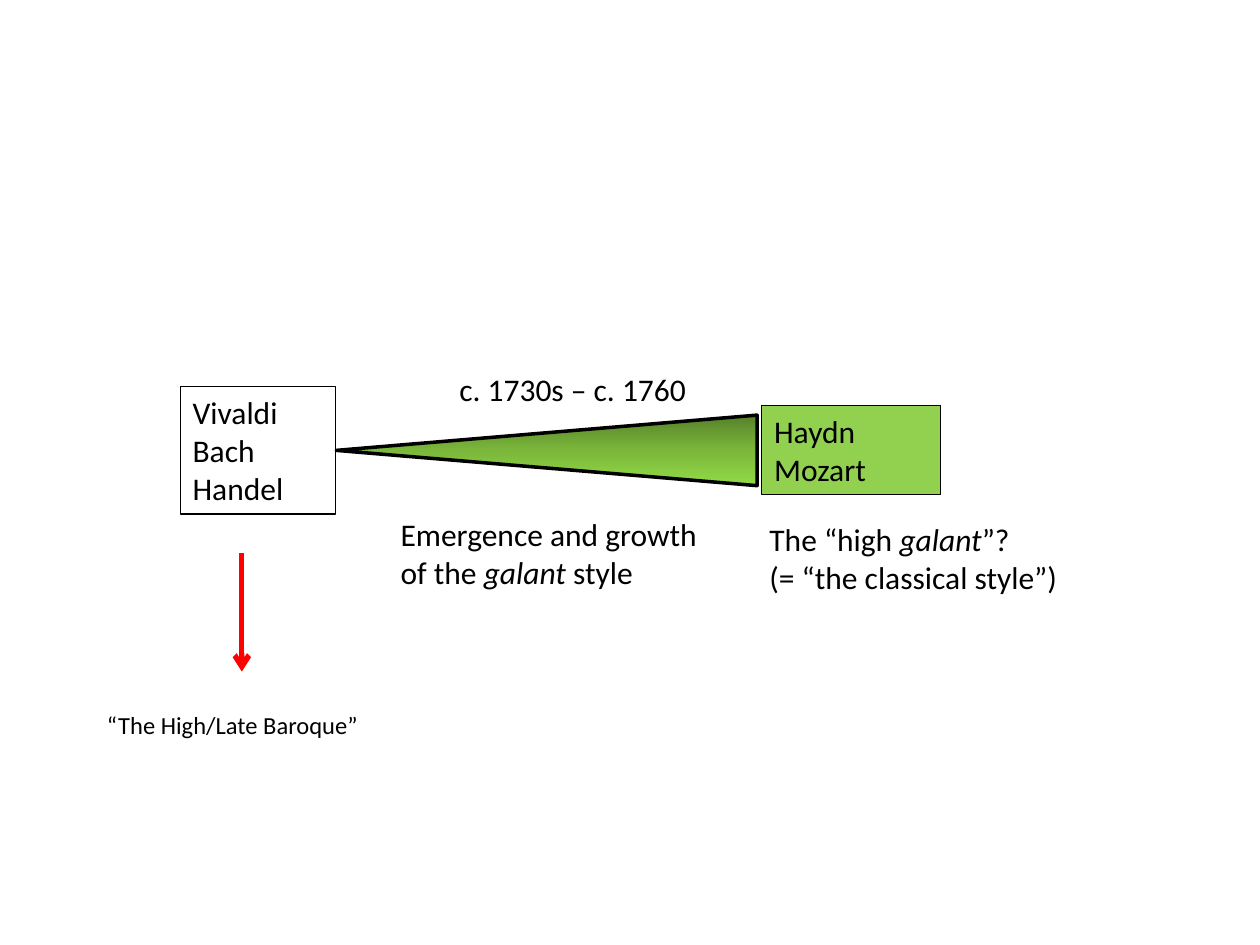
from copy import deepcopy

from lxml import etree
from pptx import Presentation
from pptx.dml.color import RGBColor
from pptx.enum.shapes import MSO_CONNECTOR, MSO_SHAPE
from pptx.enum.text import MSO_AUTO_SIZE
from pptx.oxml.ns import qn
from pptx.util import Pt

STRAIGHT = MSO_CONNECTOR.STRAIGHT
EXTRACT = MSO_SHAPE.FLOWCHART_EXTRACT
FIT_TEXT = MSO_AUTO_SIZE.SHAPE_TO_FIT_TEXT

COLORS = {
    "ink": "000000",
    "galant": "92D050",
    "wedge_dark": "57812A",
    "wedge_mid": "7BB73B",
    "wedge_light": "92DA46",
    "arrow": "FF0000",
}


class TimelineSlide:
    """Holds the text style and the slide being drawn; lengths are points."""

    font = "Calibri"

    def __init__(self, slide):
        self.slide = slide

    @staticmethod
    def color(name):
        return RGBColor.from_string(COLORS[name])

    def outline(self, line, width, color="ink"):
        line.width = Pt(width)
        line.color.rgb = self.color(color)

    def text(self, left, top, width, height, lines, size=18):
        """Each line is a list of runs; a run in a tuple is italic."""
        label = self.slide.shapes.add_textbox(Pt(left), Pt(top), Pt(width), Pt(height))
        frame = label.text_frame
        frame.word_wrap = True
        frame.auto_size = FIT_TEXT
        for index, pieces in enumerate(lines):
            paragraph = frame.add_paragraph() if index else frame.paragraphs[0]
            for piece in pieces:
                italic = isinstance(piece, tuple)
                run = paragraph.add_run()
                run.text = piece[0] if italic else piece
                run.font.name = self.font
                run.font.size = Pt(size)
                run.font.color.rgb = self.color("ink")
                if italic:
                    run.font.italic = True
        return label

    def composers(self, left, top, width, height, names, fill=None):
        box = self.text(left, top, width, height, [[name] for name in names])
        self.outline(box.line, 0.75)
        if fill:
            box.fill.solid()
            box.fill.fore_color.rgb = self.color(fill)

    def wedge(self, left, top, length, thickness, shades):
        """Triangle pointing left, shaded from its top edge to its bottom edge."""
        shift = (length - thickness) / 2
        wedge = self.slide.shapes.add_shape(
            EXTRACT, Pt(left + shift), Pt(top - shift), Pt(thickness), Pt(length))
        wedge.rotation = 270
        wedge.shadow.inherit = False
        self.outline(wedge.line, 2)
        wedge.fill.gradient()
        wedge.fill.gradient_angle = 180
        first_stop = wedge._element.spPr.find(".//" + qn("a:gs"))
        first_stop.addnext(deepcopy(first_stop))
        for index, (stop, shade) in enumerate(zip(wedge.fill.gradient_stops, shades)):
            stop.position = index / (len(shades) - 1)
            stop.color.rgb = self.color(shade)

    def arrow(self, x, top, bottom):
        arrow = self.slide.shapes.add_connector(STRAIGHT, Pt(x), Pt(top), Pt(x), Pt(bottom))
        self.outline(arrow.line, 3, "arrow")
        etree.SubElement(arrow.line._get_or_add_ln(), qn("a:tailEnd"), type="arrow")
        etree.SubElement(arrow._element.spPr, qn("a:effectLst"))


def main():
    deck = Presentation()
    deck.slide_width, deck.slide_height = Pt(720), Pt(540)
    timeline = TimelineSlide(deck.slides.add_slide(deck.slide_layouts[6]))

    timeline.composers(103, 221, 88.6, 72.7, ["Vivaldi", "Bach", "Handel"])
    timeline.composers(435.3, 231.8, 102.2, 50.9, ["Haydn", "Mozart"], fill="galant")
    timeline.wedge(192.2, 237.2, 240.5, 40.3, ["wedge_dark", "wedge_mid", "wedge_light"])
    timeline.text(221.8, 290.9, 198, 50.9,
                  [["Emergence and growth"], ["of the ", ("galant",), " style"]])
    timeline.text(432.6, 293.8, 183, 50.9,
                  [["The “high ", ("galant",), "”?"], ["(= “the classical style”)"]])
    timeline.text(255.4, 207.6, 162, 29.1, [["c. 1730s – c. 1760"]])
    timeline.arrow(138.2, 316, 383.8)
    timeline.text(54, 402, 168, 24.2, [["“The High/Late Baroque”"]], size=14)

    deck.save("out.pptx")


if __name__ == "__main__":
    main()
